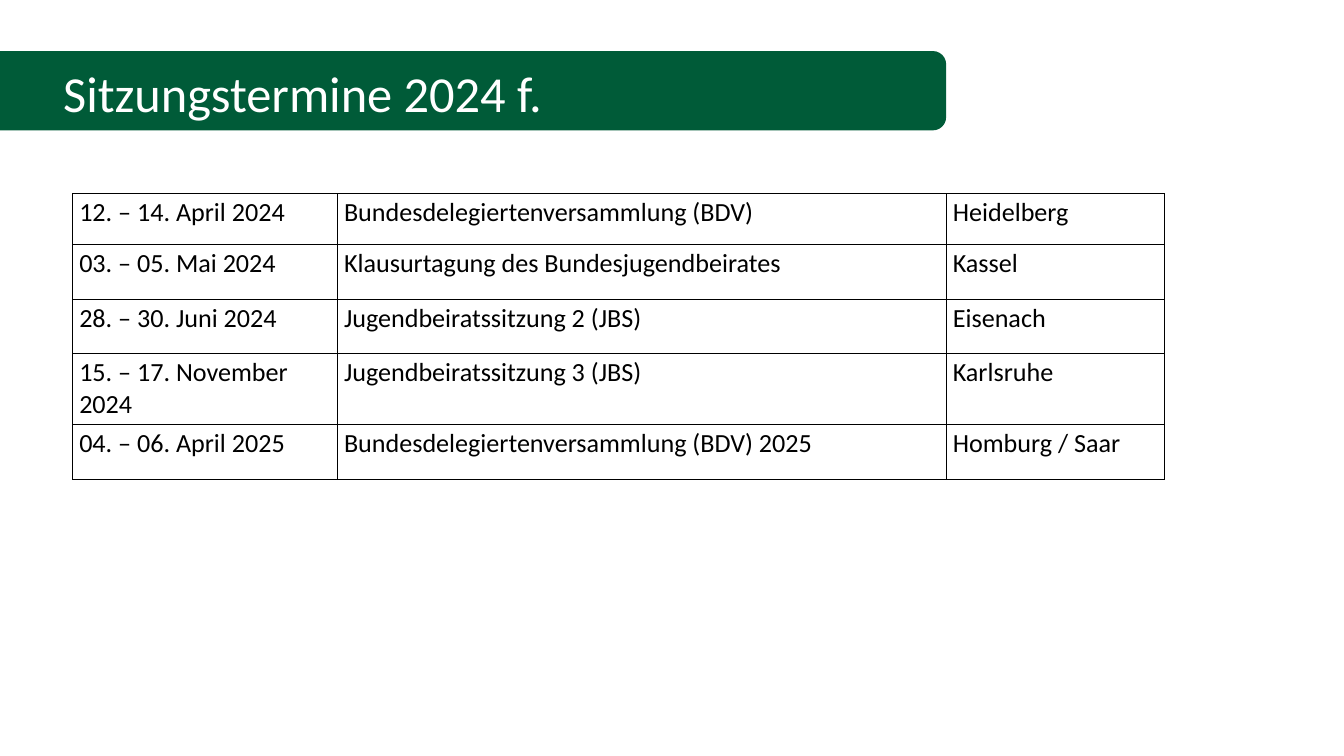
from lxml.etree import SubElement
from pptx import Presentation
from pptx.dml.color import RGBColor
from pptx.enum.shapes import MSO_SHAPE as Shape
from pptx.enum.text import MSO_ANCHOR as Anchor, MSO_AUTO_SIZE as AutoSize, PP_ALIGN as Align
from pptx.oxml.ns import qn
from pptx.util import Inches, Pt

WIDTH, HEIGHT = 20, 11.25
COLORS = {"band": "005B38", "title": "FFFFFF", "text": "000000", "border": "000000"}
FONT = "Calibri"
TITLE_LAYOUT = 5
COLUMN_WIDTHS = [3.94, 9.06, 3.25]
ROW_HEIGHTS = [0.75, 0.83, 0.8, 0.83, 0.83]
MEETINGS = [
    ("12. – 14. April 2024", "Bundesdelegiertenversammlung (BDV)", "Heidelberg"),
    ("03. – 05. Mai 2024", "Klausurtagung des Bundesjugendbeirates", "Kassel"),
    ("28. – 30. Juni 2024", "Jugendbeiratssitzung 2 (JBS)", "Eisenach"),
    ("15. – 17. November 2024", "Jugendbeiratssitzung 3 (JBS)", "Karlsruhe"),
    ("04. – 06. April 2025", "Bundesdelegiertenversammlung (BDV) 2025", "Homburg / Saar"),
]


def color(name):
    return RGBColor.from_string(COLORS[name])


def set_attributes(target, values):
    for name, value in values.items():
        setattr(target, name, value)


def write_text(frame, text, size, color_name):
    frame.text = text
    paragraph = frame.paragraphs[0]
    paragraph.alignment = Align.LEFT
    set_attributes(paragraph.font, {"name": FONT, "size": Pt(size), "bold": False})
    paragraph.font.color.rgb = color(color_name)


def add_band(slide, left, top, width, height):
    band = slide.shapes.add_shape(
        Shape.ROUNDED_RECTANGLE, *map(Inches, (left, top, width, height)))
    band.shadow.inherit = False
    band.fill.solid()
    band.fill.fore_color.rgb = color("band")
    band.line.fill.background()


def place_title(slide, text, left, top, width, height):
    title = slide.shapes.title
    set_attributes(title, {
        "left": Inches(left), "top": Inches(top),
        "width": Inches(width), "height": Inches(height)})
    frame = title.text_frame
    set_attributes(frame, {
        "margin_left": 0, "margin_right": 0, "margin_top": 0, "margin_bottom": 0,
        "word_wrap": True, "auto_size": AutoSize.NONE, "vertical_anchor": Anchor.MIDDLE})
    write_text(frame, text, 54, "title")
    slide.shapes._spTree.append(title._element)


def add_borders(cell):
    properties = cell._tc.get_or_add_tcPr()
    for side in ("a:lnL", "a:lnR", "a:lnT", "a:lnB"):
        line = SubElement(properties, qn(side), w=str(Pt(1)))
        fill = SubElement(line, qn("a:solidFill"))
        SubElement(fill, qn("a:srgbClr"), val=COLORS["border"])


def add_meeting_table(slide, left, top):
    frame = slide.shapes.add_table(
        len(MEETINGS), len(COLUMN_WIDTHS), Inches(left), Inches(top),
        Inches(sum(COLUMN_WIDTHS)), Inches(sum(ROW_HEIGHTS)))
    table = frame.table
    set_attributes(table, {"first_row": False, "horz_banding": False})
    for column, width in zip(table.columns, COLUMN_WIDTHS):
        column.width = Inches(width)
    for row, height, meeting in zip(table.rows, ROW_HEIGHTS, MEETINGS):
        row.height = Inches(height)
        for cell, text in zip(row.cells, meeting):
            write_text(cell.text_frame, text, 28, "text")
            add_borders(cell)
            cell.fill.background()


def main():
    presentation = Presentation()
    set_attributes(presentation, {
        "slide_width": Inches(WIDTH), "slide_height": Inches(HEIGHT)})
    slide = presentation.slides.add_slide(presentation.slide_layouts[TITLE_LAYOUT])
    add_band(slide, -0.75, 0.76, 14.83, 1.18)
    place_title(slide, "Sitzungstermine 2024 f.", 0.94, 0.79, 12.5, 1.18)
    add_meeting_table(slide, 1.08, 2.88)
    presentation.save("out.pptx")


if __name__ == "__main__":
    main()
